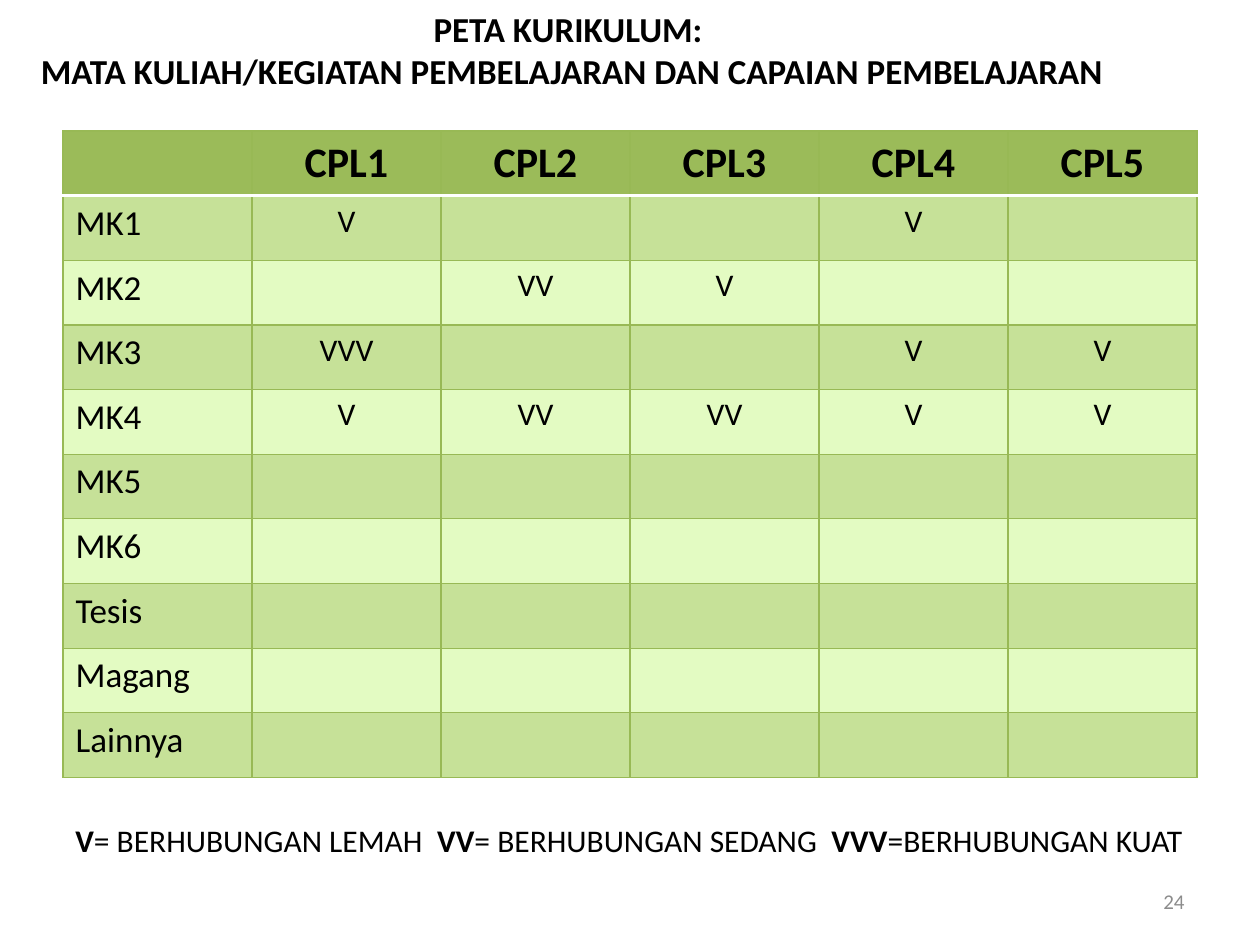
from lxml.etree import SubElement
from pptx import Presentation
from pptx.dml.color import RGBColor
from pptx.enum.text import MSO_ANCHOR as Anchor, PP_ALIGN as Align
from pptx.oxml.ns import qn
from pptx.util import Inches, Pt

# Content
TITLE = "PETA KURIKULUM: \vMATA KULIAH/KEGIATAN PEMBELAJARAN DAN CAPAIAN PEMBELAJARAN"
OUTCOMES = ["CPL1", "CPL2", "CPL3", "CPL4", "CPL5"]
COURSES = [
    ("MK1", {"CPL1": "V", "CPL4": "V"}),
    ("MK2", {"CPL2": "VV", "CPL3": "V"}),
    ("MK3", {"CPL1": "VVV", "CPL4": "V", "CPL5": "V"}),
    ("MK4", {"CPL1": "V", "CPL2": "VV", "CPL3": "VV", "CPL4": "V", "CPL5": "V"}),
    ("MK5", {}),
    ("MK6", {}),
    ("Tesis", {}),
    ("Magang", {}),
    ("Lainnya", {}),
]
LEGEND = [
    ("V", True), ("= BERHUBUNGAN LEMAH  ", False),
    ("VV", True), ("= BERHUBUNGAN SEDANG  ", False),
    ("VVV", True), ("=BERHUBUNGAN KUAT", False),
]
PAGE_NUMBER = "24"

# Formats
COLORS = {
    "text": "000000", "page": "8C8C8C", "header": "9BBB59", "band": "C6E198",
    "plain": "E3FBC2", "border": "98B955", "rule": "FFFFFF",
}
TITLE_FORMAT = {"size": Pt(20), "bold": True}
HEADER_FORMAT = {"size": Pt(24), "bold": True}
COURSE_FORMAT = {"size": Pt(20), "bold": False}
MARK_FORMAT = {"size": Pt(18), "bold": False}
PAGE_FORMAT = {"size": Pt(12), "bold": False}


def set_font(font, font_format, color="text"):
    for name, value in {"name": "Calibri", **font_format}.items():
        setattr(font, name, value)
    font.color.rgb = RGBColor.from_string(COLORS[color])


def add_text(slide, box, runs, font_format, align, anchor, color="text"):
    shape = slide.shapes.add_textbox(*map(Inches, box))
    frame = shape.text_frame
    frame.word_wrap, frame.vertical_anchor = True, anchor
    paragraph = frame.paragraphs[0]
    paragraph.alignment = align
    for text, bold in runs:
        # A vertical tab marks a line break
        for index, line in enumerate(text.split("\v")):
            if index:
                paragraph.add_line_break()
            run = paragraph.add_run()
            run.text = line
            set_font(run.font, {**font_format, "bold": bold}, color)


def set_borders(cell, borders):
    properties = cell._tc.get_or_add_tcPr()
    for side in ("L", "R", "T", "B"):
        color, width = borders.get(side, ("border", 0.75))
        line = SubElement(properties, qn(f"a:ln{side}"), w=str(Pt(width)))
        fill = SubElement(line, qn("a:solidFill"))
        SubElement(fill, qn("a:srgbClr"), val=COLORS[color])


def fill_cell(cell, text, font_format, align, fill, borders):
    set_borders(cell, borders)
    cell.fill.solid()
    cell.fill.fore_color.rgb = RGBColor.from_string(COLORS[fill])
    paragraph = cell.text_frame.paragraphs[0]
    paragraph.alignment = align
    if text:
        run = paragraph.add_run()
        run.text = text
        set_font(run.font, font_format)


def add_curriculum_table(slide):
    rows = [["", *OUTCOMES]]
    rows += [[course, *(marks.get(outcome, "") for outcome in OUTCOMES)]
             for course, marks in COURSES]
    table = slide.shapes.add_table(
        len(rows), len(rows[0]), Inches(0.5), Inches(1.04), Inches(9), Inches(5.13)
    ).table
    header_rule = ("rule", 2)
    edges = {0: {"B": header_rule}, 1: {"T": header_rule}}
    for row_index, row in enumerate(rows):
        fill = "header" if row_index == 0 else "band" if row_index % 2 else "plain"
        for column_index, text in enumerate(row):
            if row_index == 0:
                font_format = HEADER_FORMAT
            else:
                font_format = MARK_FORMAT if column_index else COURSE_FORMAT
            align = Align.CENTER if column_index else Align.LEFT
            fill_cell(table.cell(row_index, column_index), text, font_format,
                      align, fill, edges.get(row_index, {}))


def main():
    presentation = Presentation()
    presentation.slide_width, presentation.slide_height = Inches(10), Inches(7.5)
    slide = presentation.slides.add_slide(presentation.slide_layouts[6])

    # Title, table, legend and page number
    add_text(slide, (0.04, 0.12, 9, 0.55), [(TITLE, True)], TITLE_FORMAT,
             Align.CENTER, Anchor.MIDDLE)
    add_curriculum_table(slide)
    add_text(slide, (0.5, 6.47, 9.33, 0.4), LEGEND, MARK_FORMAT,
             Align.LEFT, Anchor.TOP)
    add_text(slide, (7.17, 6.95, 2.33, 0.4), [(PAGE_NUMBER, False)], PAGE_FORMAT,
             Align.RIGHT, Anchor.MIDDLE, "page")

    presentation.save("out.pptx")


if __name__ == "__main__":
    main()
